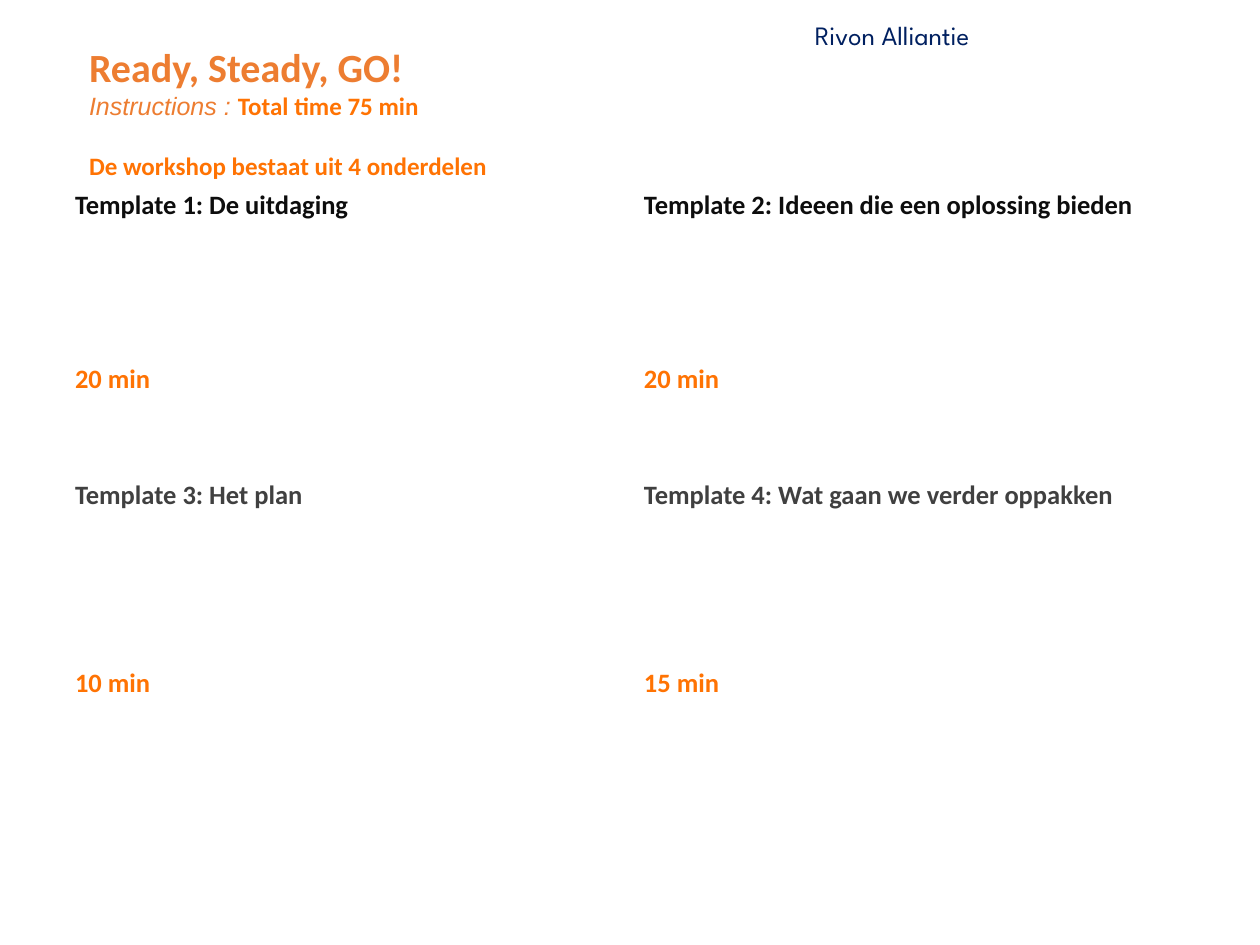
import pptx
import pptx.util
import pptx.dml.color
import pptx.enum.text

PX = 914400 // 90
THEME = {
    "title": {"size": 32, "name": "Calibri", "color": "ED7D31", "bold": True},
    "label": {"size": 20, "name": "Arial", "color": "ED7D31", "bold": False, "italic": True},
    "intro": {"size": 20, "name": "Calibri", "color": "FF7303", "bold": True},
    "top": {"size": 21.2, "name": "Calibri", "color": "0D0D0D", "bold": True},
    "bottom": {"size": 21.2, "name": "Calibri", "color": "404040", "bold": True},
    "time": {"size": 21.2, "name": "Calibri", "color": "FF7303", "bold": True},
    "alliance": {"size": 21.2, "name": "League Spartan", "color": "002060", "bold": False},
}


def px(*values):
    return [pptx.util.Emu(v * PX) for v in values]


def add_run(p, text, style):
    r = p.add_run()
    r.text = text
    for key, value in THEME[style].items():
        if key == "color":
            r.font.color.rgb = pptx.dml.color.RGBColor.from_string(value)
        else:
            setattr(r.font, key, pptx.util.Pt(value) if key == "size" else value)


prs = pptx.Presentation()
prs.slide_width, prs.slide_height = px(1260, 945)
slide = prs.slides.add_slide(prs.slide_layouts[5])

# Title with instructions
title = slide.shapes.title
title.left, title.top, title.width, title.height = px(80, 38, 420, 179)
tf = title.text_frame
tf.word_wrap = False
tf.auto_size = pptx.enum.text.MSO_AUTO_SIZE.NONE
tf.vertical_anchor = pptx.enum.text.MSO_ANCHOR.TOP
lines = [
    [("Ready, Steady, GO!", "title")],
    [("Instructions : ", "label"), ("Total time 75 min", "intro")],
    [("De workshop bestaat uit 4 onderdelen", "intro")],
]
for i, line in enumerate(lines):
    p = tf.paragraphs[0] if i == 0 else tf.add_paragraph()
    p.alignment = pptx.enum.text.PP_ALIGN.LEFT
    p.space_before = pptx.util.Pt(24 if i == 2 else 0)
    for text, style in line:
        add_run(p, text, style)

# Workshop table: heading, open space and duration for each pair of templates
rows = [
    ("top", ["Template 1: De uitdaging", "Template 2: Ideeen die een oplossing bieden"]),
    (None, []),
    ("time", ["20 min", "20 min"]),
    ("bottom", ["Template 3: Het plan", "Template 4: Wat gaan we verder oppakken"]),
    (None, []),
    ("time", ["10 min", "15 min"]),
]
heights = px(58, 116, 116, 58, 116, 116)
widths = px(569, 555)
table = slide.shapes.add_table(len(rows), 2, *px(66, 185), sum(widths), sum(heights)).table
table.first_row = table.horz_banding = False
for column, width in zip(table.columns, widths):
    column.width = width
for row, height, (style, texts) in zip(table.rows, heights, rows):
    row.height = height
    for cell in row.cells:
        cell.fill.background()
    for cell, text in zip(row.cells, texts):
        add_run(cell.text_frame.paragraphs[0], text, style)
for cell in table.rows[5].cells:
    cell.margin_top = px(18)[0]

# Alliance name
sp = slide.shapes.add_textbox(*px(806, 15, 259, 41))
sp.text_frame.word_wrap = True
add_run(sp.text_frame.paragraphs[0], "Rivon Alliantie", "alliance")

prs.save("out.pptx")
